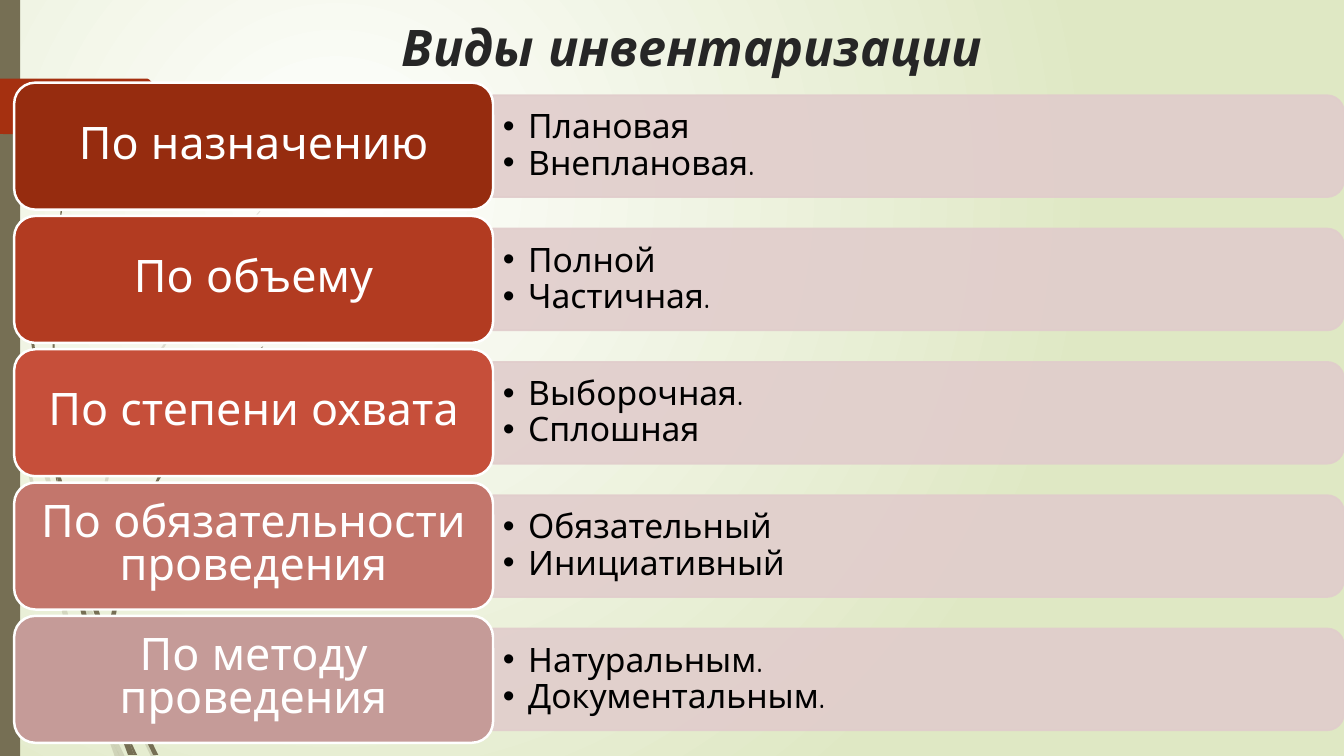
from pptx import Presentation
from pptx.dml.color import RGBColor
from pptx.enum.shapes import MSO_SHAPE as Kind
from pptx.enum.text import MSO_ANCHOR as Anchor, PP_ALIGN as Align
from pptx.oxml import parse_xml
from pptx.oxml.ns import nsdecls, qn
from pptx.util import Inches, Pt

FONT = "Quicksand"
OLIVE = "766F54"


def paint(shape, color, alpha=100, edge=None, width=1.25):
    """Fill a shape, with an optional line of the same opacity."""
    shape.shadow.inherit = False
    parts = [shape.fill]
    shape.fill.solid()
    shape.fill.fore_color.rgb = RGBColor.from_string(color)
    if edge:
        shape.line.fill.solid()
        shape.line.color.rgb = RGBColor.from_string(edge)
        shape.line.width = Pt(width)
    else:
        shape.line.fill.background()
    if alpha < 100:
        for fill in shape.element.spPr.iter(qn("a:solidFill")):
            fill[0].append(parse_xml(
                f'<a:alpha {nsdecls("a")} val="{alpha * 1000}"/>'))


def write(shape, lines, size, color, align=Align.LEFT, gap=0.9,
          pad=(0.1, 0.05), bullet=False, bold=False, italic=False):
    """Put one paragraph per line into a shape."""
    frame = shape.text_frame
    frame.word_wrap = True
    frame.vertical_anchor = Anchor.MIDDLE
    frame.margin_left = frame.margin_right = Inches(pad[0])
    frame.margin_top = frame.margin_bottom = Inches(pad[1])
    for i, line in enumerate(lines):
        para = frame.add_paragraph() if i else frame.paragraphs[0]
        para.alignment = align
        para.line_spacing = gap
        para.space_before = para.space_after = Pt(0)
        if bullet:
            props = para._p.get_or_add_pPr()
            props.set("marL", str(Inches(0.25)))
            props.set("indent", str(-Inches(0.25)))
            props.append(parse_xml(f'<a:buFont {nsdecls("a")} typeface="Arial"/>'))
            props.append(parse_xml(f'<a:buChar {nsdecls("a")} char="•"/>'))
        run = para.add_run()
        run.text = line
        font = run.font
        font.name, font.size = FONT, Pt(size)
        font.bold, font.italic = bold, italic
        font.color.rgb = RGBColor.from_string(color)


deck = Presentation()
deck.slide_width, deck.slide_height = Inches(13.33), Inches(7.5)
slide = deck.slides.add_slide(deck.slide_layouts[5])
shapes = slide.shapes

# Background: round gradient, white at the upper left
back = slide.background.fill
back.gradient()
for stop, color, place in zip(back.gradient_stops, ("FFFFFF", "DFE8C4"), (0, 1)):
    stop.color.rgb = RGBColor.from_string(color)
    stop.position = place
grad = slide.element.find(".//" + qn("a:gradFill"))
grad.remove(grad.find(qn("a:lin")))
grad.append(parse_xml(
    f'<a:path {nsdecls("a")} path="circle">'
    '<a:fillToRect l="50000" t="50000" r="100000" b="100000"/></a:path>'))

# Grass blades, in hundredths of an inch: pale ones, then dark ones
pale = [
    [(11, 350), (9, 322), (0, 282), (0, 299), (10, 344)],
    [(58, 522), (84, 599), (85, 586), (62, 520), (14, 345), (17, 376)],
    [(92, 607), (88, 596), (88, 610), (123, 694), (150, 751), (155, 751),
     (127, 692)],
    [(119, 751), (124, 751), (105, 711)],
    [(93, 683), (70, 619), (31, 469), (17, 376), (11, 350), (28, 470),
     (65, 621), (92, 693), (101, 714), (99, 707)],
    [(84, 599), (87, 646), (93, 683), (96, 692), (105, 711), (103, 706),
     (91, 646), (88, 610), (88, 608)],
    [(88, 584), (110, 462), (160, 349), (229, 245), (268, 198), (290, 175),
     (312, 154), (312, 153), (289, 175), (268, 197), (228, 244), (158, 348),
     (107, 461), (85, 584), (85, 586), (88, 596)],
    [(101, 714), (114, 751), (119, 751)],
    [(88, 608), (88, 610), (88, 596), (85, 586), (84, 599)],
    [(96, 692), (93, 683), (99, 707), (101, 714), (119, 751), (105, 711)],
]
dark = [
    [(7, 110), (17, 233), (33, 355), (56, 477), (57, 481), (55, 457),
     (55, 453), (36, 355), (19, 232), (8, 109), (5, 48), (4, 0), (3, 0),
     (4, 48)],
    [(88, 592), (106, 645), (106, 633), (106, 631), (93, 590), (60, 472),
     (64, 505)],
    [(113, 649), (110, 641), (111, 656), (132, 708), (152, 749), (157, 749),
     (136, 706)],
    [(110, 691), (98, 657), (72, 556), (64, 505), (57, 477), (68, 557),
     (93, 659), (111, 708), (117, 722), (116, 717)],
    [(60, 472), (58, 453), (54, 349), (58, 245), (63, 193), (70, 141),
     (62, 193), (56, 245), (52, 349), (55, 449)],
    [(133, 749), (136, 749), (122, 719)],
    [(57, 477), (64, 505), (60, 472), (55, 449), (55, 453)],
    [(111, 633), (125, 552), (158, 476), (205, 406), (231, 374), (245, 359),
     (261, 344), (260, 344), (245, 358), (231, 373), (204, 405), (156, 474),
     (122, 551), (106, 631), (110, 641)],
    [(117, 722), (127, 749), (131, 749)],
    [(116, 706), (110, 691), (116, 717), (117, 722), (130, 749), (133, 749),
     (122, 719)],
]
# Red marker, on the same scale
mark = [(0, 78), (146, 78), (148, 79), (173, 104), (174, 106), (173, 108),
        (148, 133), (146, 134), (0, 133)]


def trace(points, color, alpha=100):
    """Draw a closed outline."""
    pen = shapes.build_freeform(*points[0], scale=Inches(0.01))
    pen.add_line_segments(points[1:], close=True)
    paint(pen.convert_to_shape(), color, alpha)


for blades, alpha in ((pale, 20), (dark, 100)):
    for blade in blades:
        trace(blade, OLIVE, alpha)

# Left strip and marker
strip = shapes.add_shape(Kind.RECTANGLE, 0, 0, Inches(0.2), Inches(7.5))
paint(strip, OLIVE)
trace(mark, "A53010")

# Title
title = shapes.title
title.left, title.top = Inches(2.06), Inches(0.11)
title.width, title.height = Inches(9.75), Inches(0.7)
write(title, ["Виды инвентаризации "], 36, "262626", align=Align.CENTER,
      gap=1, bold=True, italic=True)

# Rows: a label box and a bar with its list
rows = [
    ("По назначению", "962C0F", ["Плановая", "Внеплановая."]),
    ("По объему", "B23B21", ["Полной", "Частичная."]),
    ("По степени охвата", "C64F3A", ["Выборочная.", "Сплошная"]),
    ("По обязательности проведения", "C3766C", ["Обязательный", "Инициативный"]),
    ("По методу проведения", "C59B98", ["Натуральным.", "Документальным."]),
]
left, wide, high = 4.89, 8.44, 1.01
for i, (name, color, items) in enumerate(rows):
    top = 0.82 + 1.3225 * i
    mid = top + 0.63
    bar = shapes.add_shape(
        Kind.ROUND_2_SAME_RECTANGLE, Inches(left + (wide - high) / 2),
        Inches(mid - wide / 2), Inches(high), Inches(wide))
    bar.rotation = 90
    paint(bar, "E1CDCC", 90, edge="E1CDCC")
    text = shapes.add_textbox(
        Inches(left), Inches(mid - 0.455), Inches(8.39), Inches(0.91))
    write(text, items, 24, "000000", bullet=True)
    box = shapes.add_shape(
        Kind.ROUNDED_RECTANGLE, Inches(0.14), Inches(top), Inches(4.75), Inches(1.26))
    paint(box, color, edge="FFFFFF", width=1.75)
    write(box, [name], 32, "FFFFFF", align=Align.CENTER, gap=0.8, pad=(0.13, 0.07))

deck.save("out.pptx")
